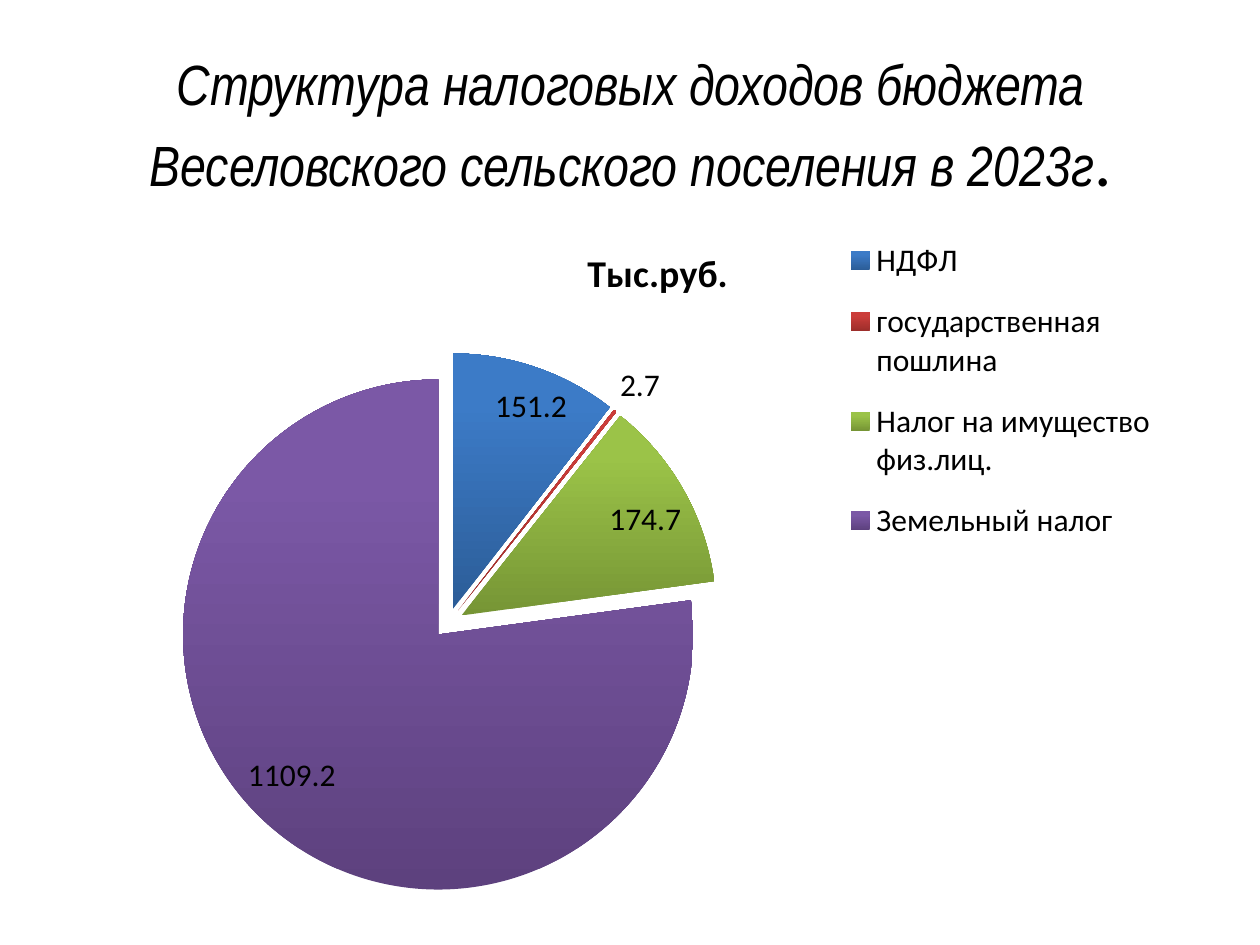
from lxml.etree import SubElement
from pptx import Presentation
from pptx.chart.data import CategoryChartData
from pptx.dml.color import RGBColor
from pptx.enum.chart import XL_CHART_TYPE, XL_LABEL_POSITION, XL_LEGEND_POSITION
from pptx.enum.text import MSO_ANCHOR, PP_ALIGN
from pptx.oxml.ns import qn
from pptx.util import Pt

UNIT = "Тыс.руб."
# name, amount, dark colour at the bottom, light colour at the top
TAXES = [
    ("НДФЛ", 151.2, "2C5D98", "3C7BC7"),
    ("государственная пошлина", 2.7, "9B2D2A", "CB3D3A"),
    ("Налог на имущество физ.лиц.", 174.7, "769535", "9BC348"),
    ("Земельный налог", 1109.2, "5D417E", "7B58A6"),
]


def color(hex_code):
    return RGBColor.from_string(hex_code)


def format_font(font, name="Calibri", size=18, bold=False, italic=False, ink="000000"):
    font.name, font.size = name, Pt(size)
    font.bold, font.italic = bold, italic
    font.color.rgb = color(ink)


def add_run(paragraph, text, **style):
    run = paragraph.add_run()
    run.text = text
    format_font(run.font, **style)


def place(part, **fractions):
    """Fix a chart part's position as fractions of the chart frame."""
    for old in part.findall(qn("c:layout")):
        part.remove(old)
    layout = SubElement(part, qn("c:layout"))
    manual = SubElement(layout, qn("c:manualLayout"))
    if part.tag == qn("c:plotArea"):
        SubElement(manual, qn("c:layoutTarget")).set("val", "inner")
        part.insert(0, layout)
    else:
        part.find(qn("c:overlay")).addprevious(layout)
    for axis in ("x", "y"):
        SubElement(manual, qn(f"c:{axis}Mode")).set("val", "edge")
    for key, value in fractions.items():
        SubElement(manual, qn(f"c:{key}")).set("val", str(value))


class TaxSlide:
    def __init__(self, slide):
        self.slide = slide

    def heading(self, left, top, width, height, pieces):
        frame = self.slide.shapes.add_textbox(
            Pt(left), Pt(top), Pt(width), Pt(height)).text_frame
        frame.word_wrap = True
        frame.vertical_anchor = MSO_ANCHOR.MIDDLE
        paragraph = frame.paragraphs[0]
        paragraph.alignment = PP_ALIGN.CENTER
        for text, style in pieces:
            add_run(paragraph, text, **style)

    def pie(self, left, top, width, height, taxes):
        data = CategoryChartData()
        data.categories = [name for name, *_ in taxes]
        data.add_series(UNIT, [amount for _, amount, *_ in taxes])
        chart = self.slide.shapes.add_chart(
            XL_CHART_TYPE.PIE, Pt(left), Pt(top), Pt(width), Pt(height), data).chart
        format_font(chart.font)

        chart.has_title = True
        add_run(chart.chart_title.text_frame.paragraphs[0], UNIT, size=21.6, bold=True)
        chart.chart_title.include_in_layout = False
        place(chart.chart_title._element, x=0.44, y=0.05)

        chart.has_legend = True
        chart.legend.position = XL_LEGEND_POSITION.RIGHT
        chart.legend.include_in_layout = False
        format_font(chart.legend.font)
        place(chart.legend._element, x=0.66, y=0.02, w=0.29, h=0.49)

        plot = chart.plots[0]
        plot.vary_by_categories = True
        place(plot._element.getparent(), x=0.09, y=0.21, w=0.47, h=0.77)
        self.slices(plot.series[0], taxes)

        plot.has_data_labels = True
        labels = plot.data_labels
        labels.show_value = True
        labels.show_percentage = False
        labels.position = XL_LABEL_POSITION.BEST_FIT
        format_font(labels.font)

    def slices(self, series, taxes):
        for index, (_, _, dark, light) in enumerate(taxes):
            fill = series.points[index].format.fill
            fill.gradient()
            fill.gradient_angle = 90
            bottom, top = fill.gradient_stops
            bottom.color.rgb, bottom.position = color(dark), 0
            top.color.rgb, top.position = color(light), 0.8
        explosion = SubElement(series._element, qn("c:explosion"))
        explosion.set("val", "6")
        series._element.find(qn("c:dPt")).addprevious(explosion)


def main():
    deck = Presentation()
    deck.slide_width, deck.slide_height = Pt(720), Pt(540)
    page = TaxSlide(deck.slides.add_slide(deck.slide_layouts[6]))
    page.heading(36.5, 26, 648, 90, [
        ("Структура налоговых доходов бюджета Веселовского сельского поселения в 2023г",
         dict(name="Arial Narrow", size=32.4, italic=True)),
        (".", dict(size=39.6)),
    ])
    page.pie(42.5, 116.6, 657.4, 402.5, TAXES)
    deck.save("out.pptx")


if __name__ == "__main__":
    main()
